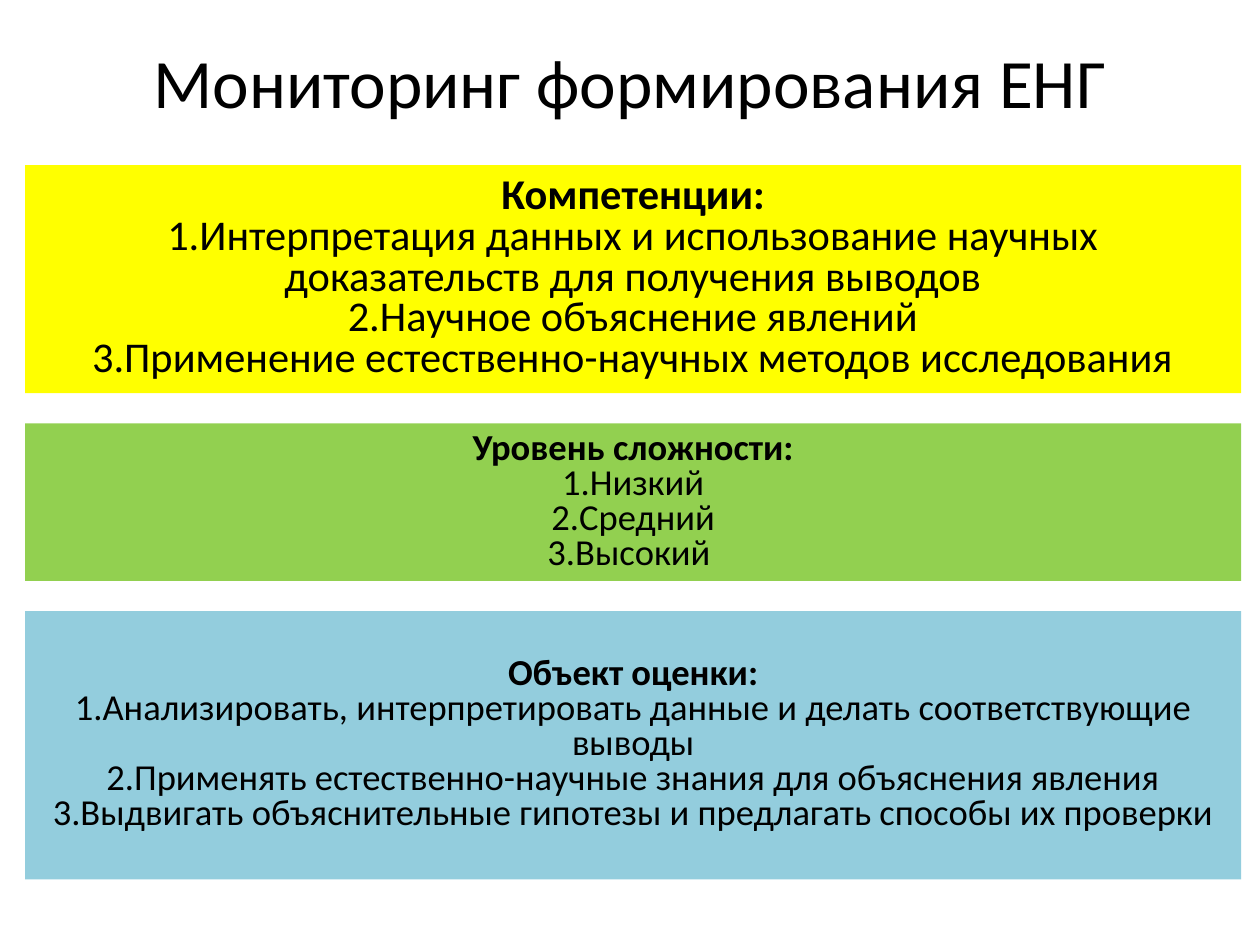
from dataclasses import dataclass

from pptx import Presentation
from pptx import util as u
from pptx.dml.color import RGBColor
from pptx.enum import shapes, text

BLACK = RGBColor(0x00, 0x00, 0x00)
YELLOW = RGBColor(0xFF, 0xFF, 0x00)
GREEN = RGBColor(0x92, 0xD0, 0x50)
BLUE = RGBColor(0x93, 0xCD, 0xDD)
FONT = "Calibri"

SLIDE_W, SLIDE_H = u.Inches(10), u.Inches(7.5)
BAND_LEFT, BAND_W = u.Inches(0.2), u.Inches(9.65)
BANDS_TOP, BAND_GAP = u.Inches(1.31), u.Inches(0.24)


@dataclass(frozen=True)
class Band:
    heading: str
    items: tuple[str, ...]
    fill: RGBColor
    height: float  # inches
    size: float  # points


BANDS = (
    Band("Компетенции:", (
        "1.Интерпретация данных и использование научных доказательств для получения выводов",
        "2.Научное объяснение явлений",
        "3.Применение естественно-научных методов исследования",
    ), YELLOW, 1.81, 24.2),
    Band("Уровень сложности:", (
        "1.Низкий",
        "2.Средний",
        "3.Высокий ",
    ), GREEN, 1.25, 20.9),
    Band("Объект оценки:", (
        "1.Анализировать, интерпретировать данные и делать соответствующие выводы",
        "2.Применять естественно-научные знания для объяснения явления",
        "3.Выдвигать объяснительные гипотезы и предлагать способы их проверки",
    ), BLUE, 2.13, 20.9),
)


def style(p, size: float, bold: bool = False) -> None:
    p.alignment = text.PP_ALIGN.CENTER
    p.font.name, p.font.size, p.font.bold = FONT, u.Pt(size), bold
    p.font.color.rgb = BLACK


def set_title(slide, wording: str) -> None:
    sp = slide.shapes.title
    sp.left, sp.top = u.Inches(0.5), u.Inches(0.3)
    sp.width, sp.height = u.Inches(9), u.Inches(0.69)
    tf = sp.text_frame
    tf.text = wording
    tf.auto_size = text.MSO_AUTO_SIZE.NONE
    tf.vertical_anchor = text.MSO_ANCHOR.MIDDLE
    style(tf.paragraphs[0], 39.6)


def add_band(slide, band: Band, top: int) -> int:
    """Draw the band and return its bottom edge."""
    height = u.Inches(band.height)
    sp = slide.shapes.add_shape(
        shapes.MSO_SHAPE.RECTANGLE, BAND_LEFT, top, BAND_W, height)
    sp.shadow.inherit = False
    sp.fill.solid()
    sp.fill.fore_color.rgb = band.fill
    sp.line.fill.background()
    tf = sp.text_frame
    tf.word_wrap = True
    tf.vertical_anchor = text.MSO_ANCHOR.MIDDLE
    tf.text = "\n".join((band.heading, *band.items))
    for i, p in enumerate(tf.paragraphs):
        style(p, band.size, bold=i == 0)
        p.line_spacing = 0.8
    return top + height


def main() -> None:
    prs = Presentation()
    prs.slide_width, prs.slide_height = SLIDE_W, SLIDE_H
    slide = prs.slides.add_slide(prs.slide_layouts.get_by_name("Title Only"))
    set_title(slide, "Мониторинг формирования ЕНГ")
    top = BANDS_TOP
    for band in BANDS:
        top = add_band(slide, band, top) + BAND_GAP
    prs.save("out.pptx")


if __name__ == "__main__":
    main()
